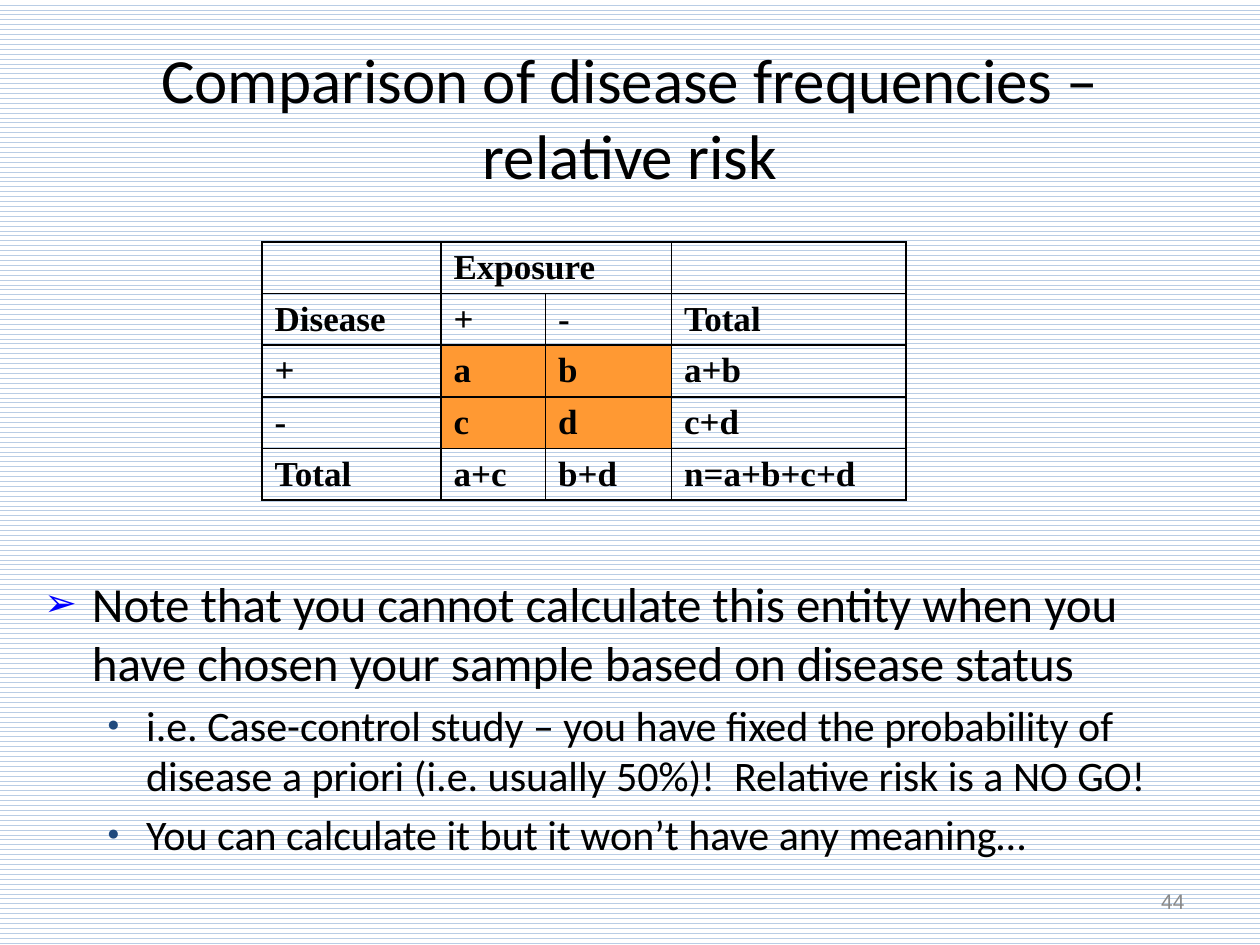
import pptx
import pptx.util
import pptx.dml.color
import pptx.enum.dml
import pptx.enum.text
import pptx.oxml
import pptx.oxml.ns
from pptx.util import Inches

RGBColor = pptx.dml.color.RGBColor
BLACK = RGBColor(0x00, 0x00, 0x00)
WHITE = RGBColor(0xFF, 0xFF, 0xFF)
PALE_BLUE = RGBColor(0xB9, 0xCD, 0xE5)
BLUE = RGBColor(0x00, 0x00, 0xFF)
NAVY = RGBColor(0x1F, 0x49, 0x7D)
ORANGE = RGBColor(0xFF, 0x99, 0x33)
GREY = RGBColor(0x89, 0x89, 0x89)

ALIGN = pptx.enum.text.PP_ALIGN
ANCHOR = pptx.enum.text.MSO_ANCHOR

TITLE = "Comparison of disease frequencies – relative risk"
RISK_ROWS = [
    ["", "Exposure", "", ""],
    ["Disease", "+", "-", "Total"],
    ["+", "a", "b", "a+b"],
    ["-", "c", "d", "c+d"],
    ["Total", "a+c", "b+d", "n=a+b+c+d"],
]
COLUMN_WIDTHS = [1.42, 0.83, 1, 1.86]
COUNT_CELLS = [(2, 1), (2, 2), (3, 1), (3, 2)]
NOTES = [
    (0, "Note that you cannot calculate this entity when you have chosen "
        "your sample based on disease status"),
    (1, "i.e. Case-control study – you have fixed the probability of disease "
        "a priori (i.e. usually 50%)!  Relative risk is a NO GO!"),
    (1, "You can calculate it but it won’t have any meaning…"),
]
# Per level: text size, left margin, hanging indent, bullet, colour, bullet size %
NOTE_LEVELS = [
    (28, 0.38, -0.38, "➢", BLUE, 80),
    (24, 0.81, -0.31, "●", NAVY, 50),
]


def add_span(para, text, size=20, font="Calibri", color=BLACK, bold=False,
             align=None):
    span = para.add_run()
    span.text = text
    span.font.size = pptx.util.Pt(size)
    span.font.name = font
    span.font.color.rgb = color
    span.font.bold = bold
    if align is not None:
        para.alignment = align


def place(shape, box):
    shape.left, shape.top, shape.width, shape.height = map(Inches, box)


def add_element(parent, xml):
    declared = xml.replace(" ", " " + pptx.oxml.ns.nsdecls("a") + " ", 1)
    parent.append(pptx.oxml.parse_xml(declared))


def set_bullet(para, margin, indent, mark, color, percent):
    properties = para._p.get_or_add_pPr()
    properties.set("marL", str(Inches(margin)))
    properties.set("indent", str(Inches(indent)))
    add_element(properties, f'<a:buClr ><a:srgbClr val="{color}"/></a:buClr>')
    add_element(properties, f'<a:buSzPct val="{percent * 1000}"/>')
    add_element(properties, '<a:buFont typeface="Arial"/>')
    add_element(properties, f'<a:buChar char="{mark}"/>')


def set_borders(cell, width=1):
    properties = cell._tc.get_or_add_tcPr()
    for position, side in enumerate(("lnL", "lnR", "lnT", "lnB")):
        line = pptx.oxml.parse_xml(
            f'<a:{side} {pptx.oxml.ns.nsdecls("a")} w="{pptx.util.Pt(width)}">'
            f'<a:solidFill><a:srgbClr val="{BLACK}"/></a:solidFill></a:{side}>')
        properties.insert(position, line)


def build_background(page):
    fill = page.background.fill
    fill.patterned()
    fill.pattern = pptx.enum.dml.MSO_PATTERN.WAVE
    fill.fore_color.rgb = PALE_BLUE
    fill.back_color.rgb = WHITE


def build_title(page, box):
    title = page.shapes.title
    place(title, box)
    frame = title.text_frame
    frame.auto_size = pptx.enum.text.MSO_AUTO_SIZE.NONE
    frame.vertical_anchor = ANCHOR.MIDDLE
    add_span(frame.paragraphs[0], TITLE, size=36, align=ALIGN.CENTER)


def build_notes(page, box):
    body = page.placeholders[1]
    place(body, box)
    frame = body.text_frame
    frame.auto_size = pptx.enum.text.MSO_AUTO_SIZE.NONE
    frame.vertical_anchor = ANCHOR.TOP
    for index, (level, text) in enumerate(NOTES):
        para = frame.add_paragraph() if index else frame.paragraphs[0]
        para.level = level
        size, *bullet = NOTE_LEVELS[level]
        set_bullet(para, *bullet)
        add_span(para, text, size=size)


def build_risk_table(page, box):
    frame = page.shapes.add_table(len(RISK_ROWS), len(COLUMN_WIDTHS),
                                  *map(Inches, box))
    table = frame.table
    table.first_row = False
    table.horz_banding = False
    for column, width in zip(table.columns, COLUMN_WIDTHS):
        column.width = Inches(width)
    for r, texts in enumerate(RISK_ROWS):
        for c, text in enumerate(texts):
            cell = table.cell(r, c)
            if (r, c) in COUNT_CELLS:
                cell.fill.solid()
                cell.fill.fore_color.rgb = ORANGE
            else:
                cell.fill.background()
            set_borders(cell)
            if text:
                add_span(cell.text_frame.paragraphs[0], text,
                         font="Times New Roman", bold=True)
    # The exposure heading covers both exposure columns
    table.cell(0, 1).merge(table.cell(0, 2))


def build_page_number(page, box):
    frame = page.shapes.add_textbox(*map(Inches, box)).text_frame
    frame.word_wrap = True
    frame.vertical_anchor = ANCHOR.MIDDLE
    add_span(frame.paragraphs[0], "44", size=12, font="Arial", color=GREY,
             align=ALIGN.RIGHT)


def main():
    deck = pptx.Presentation()
    deck.slide_width, deck.slide_height = Inches(10), Inches(7.5)
    page = deck.slides.add_slide(deck.slide_layouts[1])
    build_background(page)
    build_title(page, (0.5, 0.3, 9, 1.25))
    build_notes(page, (0.25, 4.5, 9.25, 1.25))
    build_risk_table(page, (2.08, 1.92, 5.11, 2.05))
    build_page_number(page, (7.17, 6.95, 2.33, 0.4))
    deck.save("out.pptx")


if __name__ == "__main__":
    main()
